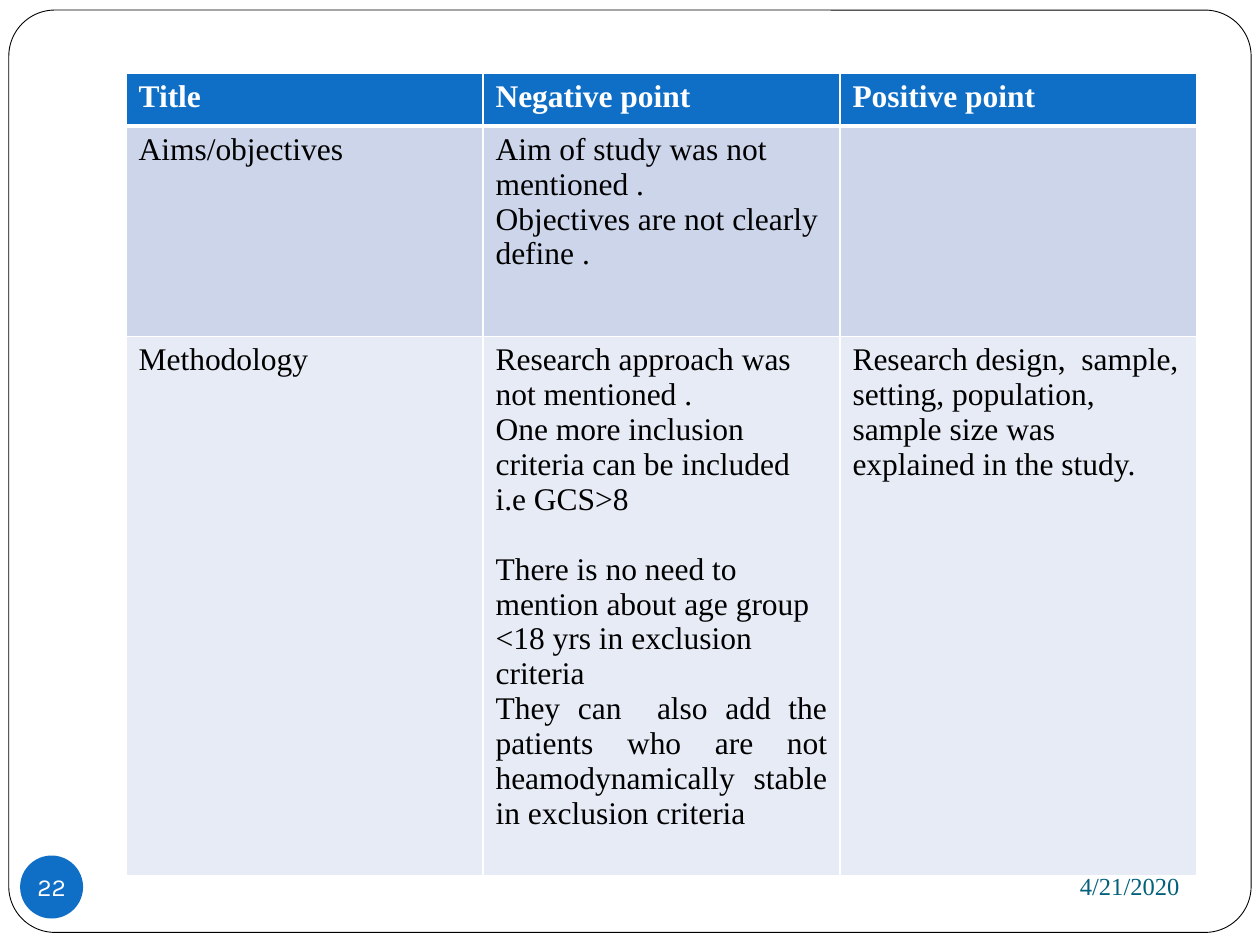
from lxml import etree
from pptx import Presentation
from pptx.dml.color import RGBColor
from pptx.enum.shapes import MSO_SHAPE
from pptx.enum.text import MSO_ANCHOR, PP_ALIGN
from pptx.oxml.ns import qn
from pptx.util import Inches, Pt

ROUNDED, OVAL = MSO_SHAPE.ROUNDED_RECTANGLE, MSO_SHAPE.OVAL
LEFT, CENTER, RIGHT, JUSTIFY = PP_ALIGN.LEFT, PP_ALIGN.CENTER, PP_ALIGN.RIGHT, PP_ALIGN.JUSTIFY
MIDDLE = MSO_ANCHOR.MIDDLE
SERIF, SANS = "Times New Roman", "Karla"
COLORS = {
    "white": "FFFFFF",
    "black": "000000",
    "blue": "0F6FC6",
    "teal": "04617B",
    "aims": "CCD5EA",
    "methods": "E7EBF5",
}
HEADERS = ["Title", "Negative point", "Positive point"]
AIMS = [
    ["Aims/objectives"],
    ["Aim of study was not mentioned .", "Objectives are not clearly define ."],
    [],
]
METHODS = [
    ["Methodology"],
    [
        "Research approach was not mentioned .",
        "One more inclusion criteria can be included i.e GCS>8",
        "There is no need to mention about age group <18 yrs in exclusion criteria",
        "They can  also add the patients who are not heamodynamically stable in exclusion criteria",
    ],
    ["Research design,  sample, setting, population, sample size was explained in the study."],
]
ROWS = [
    (0.42, "blue", "white", True, 3, [[header] for header in HEADERS]),
    (1.67, "aims", "black", False, 1, AIMS),
    (4.16, "methods", "black", False, 1, METHODS),
]


def color(name):
    return RGBColor.from_string(COLORS[name])


def write(paragraph, text, size, font, color_name, bold=False, align=LEFT):
    paragraph.alignment = align
    run = paragraph.add_run()
    run.text = text
    run.font.size = Pt(size)
    run.font.name = font
    run.font.bold = bold
    run.font.color.rgb = color(color_name)


def add_filled_shape(slide, kind, box, fill):
    shape = slide.shapes.add_shape(kind, *map(Inches, box))
    shape.shadow.inherit = False
    shape.fill.solid()
    shape.fill.fore_color.rgb = color(fill)
    return shape


def add_frame(slide, box):
    frame = add_filled_shape(slide, ROUNDED, box, "white")
    frame.adjustments[0] = 0.05
    frame.line.color.rgb = color("black")
    frame.line.width = Pt(0.5)


def add_date(slide, box):
    text_frame = slide.shapes.add_textbox(*map(Inches, box)).text_frame
    text_frame.word_wrap = True
    text_frame.vertical_anchor = MIDDLE
    write(text_frame.paragraphs[0], "4/21/2020", 14, SERIF, "teal", align=RIGHT)


def add_page_number(slide, box):
    badge = add_filled_shape(slide, OVAL, box, "blue")
    badge.line.fill.background()
    text_frame = badge.text_frame
    text_frame.margin_left = text_frame.margin_right = 0
    text_frame.margin_top = text_frame.margin_bottom = 0
    text_frame.word_wrap = False
    text_frame.vertical_anchor = MIDDLE
    write(text_frame.paragraphs[0], "22", 14, SANS, "white", align=CENTER)


def set_borders(cell, top, bottom):
    properties = cell._tc.get_or_add_tcPr()
    for side, width in (("L", 1), ("R", 1), ("T", top), ("B", bottom)):
        line = etree.SubElement(properties, qn(f"a:ln{side}"), w=str(Pt(width)))
        fill = etree.SubElement(line, qn("a:solidFill"))
        etree.SubElement(fill, qn("a:srgbClr"), val=COLORS["white"])


def fill_cell(cell, lines, fill, text_color, bold):
    cell.fill.solid()
    cell.fill.fore_color.rgb = color(fill)
    for index, text in enumerate(lines):
        paragraph = cell.text_frame.paragraphs[0] if index == 0 else cell.text_frame.add_paragraph()
        align = JUSTIFY if index == 3 else LEFT
        write(paragraph, text, 18, SERIF, text_color, bold, align)
        if index == 2:
            paragraph.space_before = Pt(20)


def add_review_table(slide, box):
    table = slide.shapes.add_table(len(ROWS), len(HEADERS), *map(Inches, box)).table
    for column in table.columns:
        column.width = Inches(box[2] / len(HEADERS))
    top = 1
    for index, (height, fill, text_color, bold, bottom, cells) in enumerate(ROWS):
        table.rows[index].height = Inches(height)
        for column, lines in enumerate(cells):
            cell = table.cell(index, column)
            set_borders(cell, top, bottom)
            fill_cell(cell, lines, fill, text_color, bold)
        top = bottom


def main():
    presentation = Presentation()
    presentation.slide_width = Inches(10)
    presentation.slide_height = Inches(7.5)
    slide = presentation.slides.add_slide(presentation.slide_layouts[6])
    add_frame(slide, (0.07, 0.08, 9.86, 7.32))
    add_date(slide, (6.75, 6.77, 2.71, 0.52))
    add_page_number(slide, (0.16, 6.79, 0.5, 0.5))
    add_review_table(slide, (1, 0.58, 8.5, 6.25))
    presentation.save("out.pptx")


if __name__ == "__main__":
    main()
